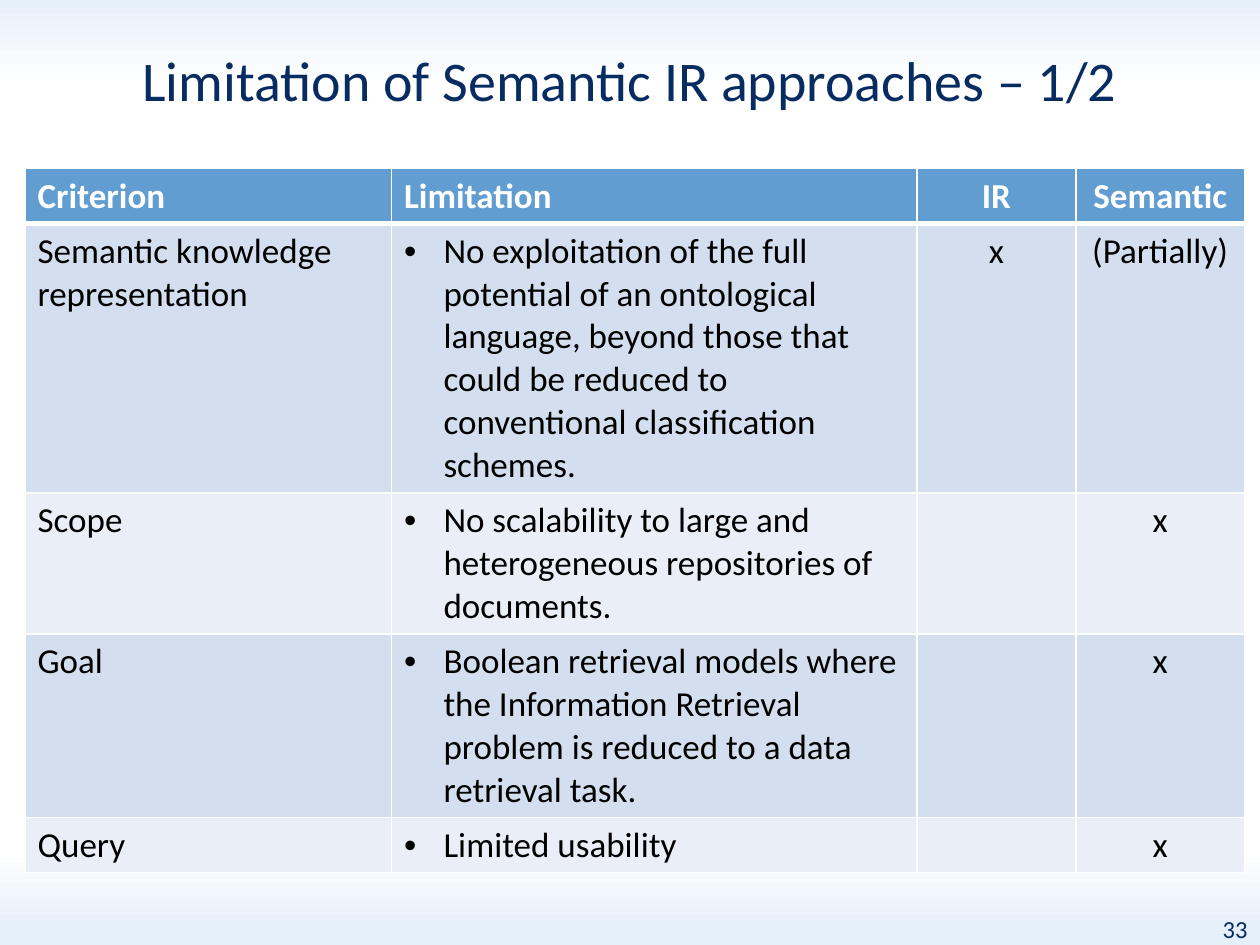
from dataclasses import dataclass

from lxml.etree import SubElement
from pptx import Presentation
from pptx.dml.color import RGBColor
from pptx.enum.text import MSO_ANCHOR, PP_ALIGN
from pptx.oxml.ns import qn
from pptx.util import Pt

COLORS = {
    "sky": "E6F0FA", "white": "FFFFFF", "navy": "072C62", "black": "000000",
    "header": "629DD1", "odd": "D3DFEE", "even": "EAEFF7",
}
FONT = "Calibri"
LEFT, CENTER, RIGHT = PP_ALIGN.LEFT, PP_ALIGN.CENTER, PP_ALIGN.RIGHT
LINE_HEIGHT, CELL_PADDING = 24.5, 7
BULLET_INDENT = 22.5


@dataclass
class Criterion:
    name: str
    limitation: str
    ir: str
    semantic: str
    lines: int = 1


HEADER = Criterion("Criterion", "Limitation", "IR", "Semantic")
CRITERIA = [
    Criterion("Semantic knowledge representation",
              "No exploitation of the full potential of an ontological language, "
              "beyond those that could be reduced to conventional classification "
              "schemes.", "x", "(Partially)", 6),
    Criterion("Scope", "No scalability to large and heterogeneous repositories "
              "of documents.", "", "x", 3),
    Criterion("Goal", "Boolean retrieval models where the Information Retrieval "
              "problem is reduced to a data retrieval task.", "", "x", 4),
    Criterion("Query", "Limited usability", "", "x"),
]
COLUMN_WIDTHS = [209.5, 300.25, 90.75, 96.5]
COLUMN_ALIGN = [LEFT, LEFT, CENTER, CENTER]


def rgb(name: str) -> RGBColor:
    return RGBColor.from_string(COLORS[name])


def write(tf, text: str, *, size: float, color: str, align=LEFT, bold=False,
          bullet=False, spacing=None) -> None:
    """Write one formatted paragraph into a text frame."""
    p = tf.paragraphs[0]
    p.alignment = align
    if spacing:
        p.line_spacing = spacing
    if bullet:
        pPr = p._p.get_or_add_pPr()
        pPr.set("marL", str(Pt(BULLET_INDENT)))
        pPr.set("indent", str(-Pt(BULLET_INDENT)))
        SubElement(pPr, qn("a:buFont"), typeface="Arial")
        SubElement(pPr, qn("a:buChar"), char="•")
    r = p.add_run()
    r.text = text
    r.font.name, r.font.size, r.font.bold = FONT, Pt(size), bold
    r.font.color.rgb = rgb(color)


def add_text(s, box: tuple, text: str, *, inset=None, anchor=MSO_ANCHOR.TOP,
             **fmt) -> None:
    tf = s.shapes.add_textbox(*map(Pt, box)).text_frame
    tf.word_wrap = True
    tf.vertical_anchor = anchor
    if inset is not None:
        tf.margin_left = tf.margin_right = Pt(inset)
        tf.margin_top = tf.margin_bottom = Pt(inset)
    write(tf, text, **fmt)


def set_borders(cell, widths: dict[str, float]) -> None:
    tcPr = cell._tc.get_or_add_tcPr()
    for side, width in widths.items():
        ln = SubElement(tcPr, qn(f"a:ln{side}"), w=str(Pt(width)))
        fill = SubElement(ln, qn("a:solidFill"))
        SubElement(fill, qn("a:srgbClr"), val=COLORS["white"])


def set_background(s, stops: list[tuple[int, str]]) -> None:
    """Vertical gradient, with stops in percent from the top."""
    fill = s.background.fill
    fill.gradient()
    fill.gradient_angle = 270
    gs_list = next(s.element.iter(qn("a:gsLst")))
    for gs in list(gs_list):
        gs_list.remove(gs)
    for percent, color in stops:
        gs = SubElement(gs_list, qn("a:gs"), pos=str(percent * 1000))
        SubElement(gs, qn("a:srgbClr"), val=COLORS[color])


def add_criteria_table(s, left: float, top: float) -> None:
    rows = [HEADER, *CRITERIA]
    heights = [LINE_HEIGHT * row.lines + CELL_PADDING for row in rows]
    table = s.shapes.add_table(len(rows), len(COLUMN_WIDTHS), Pt(left), Pt(top),
                               Pt(sum(COLUMN_WIDTHS)), Pt(sum(heights))).table
    for column, width in zip(table.columns, COLUMN_WIDTHS):
        column.width = Pt(width)
    for i, row in enumerate(rows):
        table.rows[i].height = Pt(heights[i])
        is_header = i == 0
        fill = "header" if is_header else "odd" if i % 2 else "even"
        borders = {"L": 1, "R": 1, "T": 3 if i == 1 else 1,
                   "B": 3 if is_header else 1}
        texts = [row.name, row.limitation, row.ir, row.semantic]
        for j, text in enumerate(texts):
            cell = table.cell(i, j)
            set_borders(cell, borders)
            cell.fill.solid()
            cell.fill.fore_color.rgb = rgb(fill)
            if text:
                write(cell.text_frame, text, size=20, bold=is_header,
                      color="white" if is_header else "black",
                      align=COLUMN_ALIGN[j], bullet=j == 1 and not is_header)


def main() -> None:
    prs = Presentation()
    prs.slide_width, prs.slide_height = Pt(720), Pt(540)
    s = prs.slides.add_slide(prs.slide_layouts[6])
    set_background(s, [(0, "sky"), (9, "white"), (90, "white"), (98, "sky")])

    # Title
    add_text(s, (0, 18, 720, 59), "Limitation of Semantic IR approaches – 1/2",
             inset=0, anchor=MSO_ANCHOR.MIDDLE, size=32, color="navy",
             align=CENTER, spacing=0.93)
    # Criteria and their limitations
    add_criteria_table(s, 14.25, 96.25)
    # Page number
    add_text(s, (643.75, 519, 76.25, 20), "33", size=14, color="navy", align=RIGHT)

    prs.save("out.pptx")


if __name__ == "__main__":
    main()
